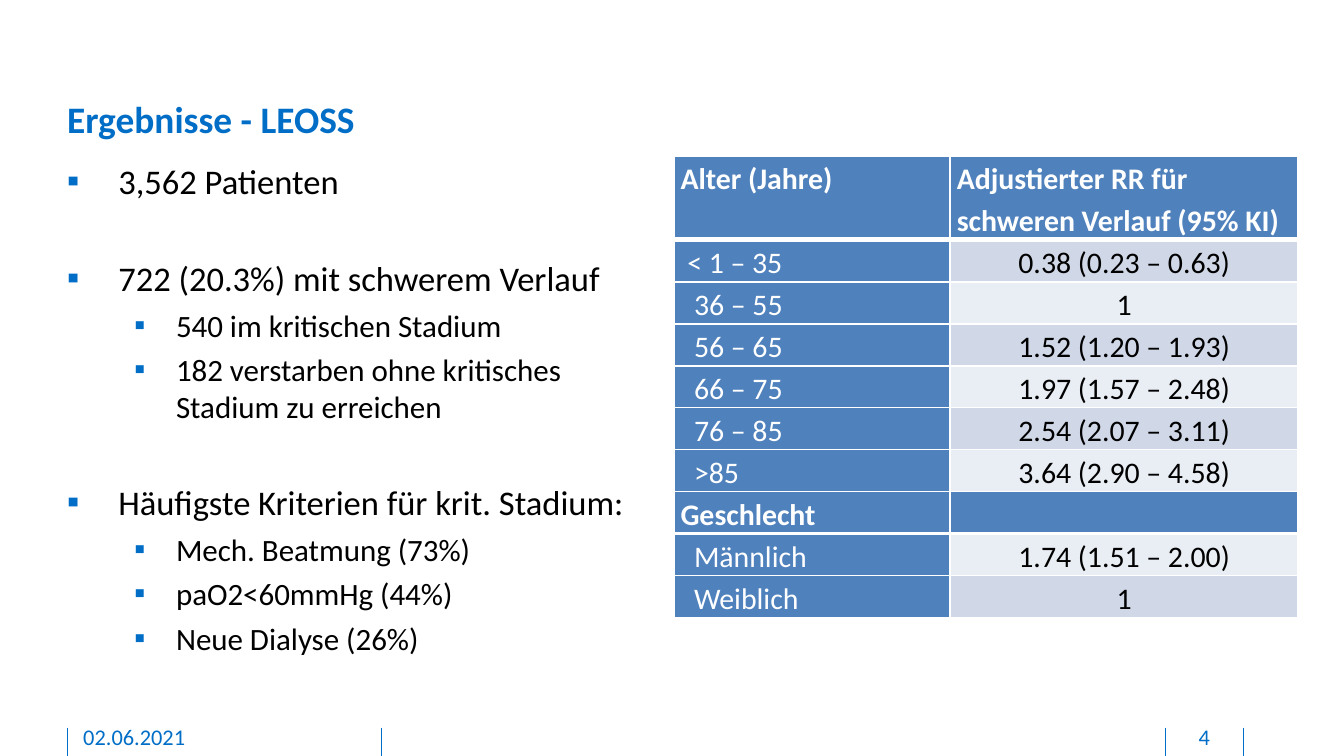
from dataclasses import dataclass

from lxml.etree import SubElement
from pptx import Presentation
from pptx.dml.color import RGBColor
from pptx.enum.shapes import MSO_CONNECTOR as Connector
from pptx.enum.text import MSO_ANCHOR as Anchor, PP_ALIGN as Align
from pptx.oxml import parse_xml
from pptx.oxml.ns import nsdecls, qn
from pptx.util import Pt


@dataclass(frozen=True)
class Theme:
    font: str = "Calibri"
    accent: str = "006EC7"
    ink: str = "000000"
    paper: str = "FFFFFF"
    head: str = "4F81BD"
    bands: tuple = ("E9EDF4", "D0D8E8")  # even rows, odd rows
    title: float = 20
    body: tuple = (18.5, 16.6)  # by bullet level
    table: float = 16
    footer: float = 12


THEME = Theme()
WIDTH, HEIGHT = 720, 405

# Each bullet: level, text, starts a new group
BULLETS = [
    (0, "3,562 Patienten", False),
    (0, "722 (20.3%) mit schwerem Verlauf", True),
    (1, "540 im kritischen Stadium", False),
    (1, "182 verstarben ohne kritisches Stadium zu erreichen", False),
    (0, "Häufigste Kriterien für krit. Stadium:", True),
    (1, "Mech. Beatmung (73%)", False),
    (1, "paO2<60mmHg (44%)", False),
    (1, "Neue Dialyse (26%)", False),
]
INDENTS = [(27.4, 27.4), (58.3, 22.3)]  # text margin and hanging part
ITEM_GAP, GROUP_GAP = 4, 30

RISKS = [
    ("Alter (Jahre)", "Adjustierter RR für schweren Verlauf (95% KI)"),
    ("< 1 – 35", "0.38 (0.23 – 0.63)"),
    ("36 – 55", "1"),
    ("56 – 65", "1.52 (1.20 – 1.93)"),
    ("66 – 75", "1.97 (1.57 – 2.48)"),
    ("76 – 85", "2.54 (2.07 – 3.11)"),
    (">85", "3.64 (2.90 – 4.58)"),
    ("Geschlecht", ""),
    ("Männlich", "1.74 (1.51 – 2.00)"),
    ("Weiblich", "1"),
]
HEAD_RULES = {0: 3, 7: 2.25}  # heading rows and the rule below each
ROW_HEIGHT = 22.5


def style(para, size, color, bold=False):
    for span in para.runs:
        span.font.name = THEME.font
        span.font.size = Pt(size)
        span.font.bold = bold
        span.font.color.rgb = RGBColor.from_string(color)


def add_box(page, left, top, width, height):
    frame = page.shapes.add_textbox(Pt(left), Pt(top), Pt(width), Pt(height)).text_frame
    frame.word_wrap = True
    frame.vertical_anchor = Anchor.TOP
    frame.margin_left = frame.margin_right = frame.margin_top = frame.margin_bottom = 0
    return frame


def add_title(page, left, top, width, height, text):
    para = add_box(page, left, top, width, height).paragraphs[0]
    para.text = text
    para.line_spacing = Pt(21.5)
    style(para, THEME.title, THEME.accent, bold=True)


def set_bullet(para, level):
    margin, hanging = INDENTS[level]
    props = para._p.get_or_add_pPr()
    props.set("marL", str(Pt(margin)))
    props.set("indent", str(-Pt(hanging)))
    color = SubElement(props, qn("a:buClr"))
    SubElement(color, qn("a:srgbClr"), val=THEME.accent)
    SubElement(props, qn("a:buFont"), typeface=THEME.font)
    SubElement(props, qn("a:buChar"), char="▪")


def add_bullets(page, left, top, width, height):
    frame = add_box(page, left, top, width, height)
    frame.margin_top = Pt(2)
    for index, (level, text, new_group) in enumerate(BULLETS):
        para = frame.add_paragraph() if index else frame.paragraphs[0]
        para.text = text
        para.level = level
        set_bullet(para, level)
        if index:
            para.space_before = Pt(GROUP_GAP if new_group else ITEM_GAP)
        style(para, THEME.body[level], THEME.ink)


def set_borders(cell, top, bottom):
    props = cell._tc.get_or_add_tcPr()
    sides = [("lnL", 1), ("lnR", 1), ("lnT", top), ("lnB", bottom)]
    for place, (side, width) in enumerate(sides):
        props.insert(place, parse_xml(
            f'<a:{side} {nsdecls("a")} w="{Pt(width)}"><a:solidFill>'
            f'<a:srgbClr val="{THEME.paper}"/></a:solidFill></a:{side}>'))


def fill_cell(cell, text, row, column):
    is_head, is_label = row in HEAD_RULES, column == 0
    on_dark = is_head or is_label
    cell.margin_top = cell.margin_bottom = 0
    cell.margin_left = cell.margin_right = Pt(3.6 if on_dark else 5)
    if is_label and not is_head:
        cell.margin_left = Pt(7.2 if row == 1 else 10.8)
    cell.fill.solid()
    cell.fill.fore_color.rgb = RGBColor.from_string(
        THEME.head if on_dark else THEME.bands[row % 2])
    set_borders(cell, HEAD_RULES.get(row - 1, 1), HEAD_RULES.get(row, 1))
    para = cell.text_frame.paragraphs[0]
    para.text = text
    para.line_spacing = 1.15
    para.alignment = Align.LEFT if on_dark else Align.CENTER
    style(para, THEME.table, THEME.paper if on_dark else THEME.ink, bold=is_head)


def add_risk_table(page, left, top, width):
    height = ROW_HEIGHT * (len(RISKS) + 1)  # the first row holds two lines
    table = page.shapes.add_table(
        len(RISKS), 2, Pt(left), Pt(top), Pt(width), Pt(height)).table
    table.first_row = table.horz_banding = False
    label_width = 148
    table.columns[0].width = Pt(label_width)
    table.columns[1].width = Pt(width - label_width)
    for row, texts in enumerate(RISKS):
        table.rows[row].height = Pt(ROW_HEIGHT * (1 if row else 2))
        for column, text in enumerate(texts):
            fill_cell(table.cell(row, column), text, row, column)


def add_footer(page, top, height):
    # Vertical dividers down to the slide edge
    for x in (36, 204.5, 624.2, 666):
        line = page.shapes.add_connector(
            Connector.STRAIGHT, Pt(x), Pt(top + 2.5), Pt(x), Pt(top + height))
        line.line.color.rgb = RGBColor.from_string(THEME.accent)
        line.line.width = Pt(0.5)
        SubElement(line._element.spPr, qn("a:effectLst"))
    # Date and page number
    for left, width, text, align in (
            (44.6, 146, "02.06.2021", Align.LEFT), (625.7, 39, "4", Align.CENTER)):
        frame = add_box(page, left, top, width, 15)
        frame.margin_bottom = Pt(3.6)
        para = frame.paragraphs[0]
        para.text = text
        para.alignment = align
        style(para, THEME.footer, THEME.accent)


def main():
    deck = Presentation()
    deck.slide_width, deck.slide_height = Pt(WIDTH), Pt(HEIGHT)
    page = deck.slides.add_slide(deck.slide_layouts[6])
    add_footer(page, 387.4, HEIGHT - 387.4)
    add_bullets(page, 36, 83.5, 306, 296.6)
    add_title(page, 36, 54, 628.6, 22.3, "Ergebnisse - LEOSS")
    add_risk_table(page, 361, 83.5, 334.5)
    deck.save("out.pptx")


if __name__ == "__main__":
    main()
